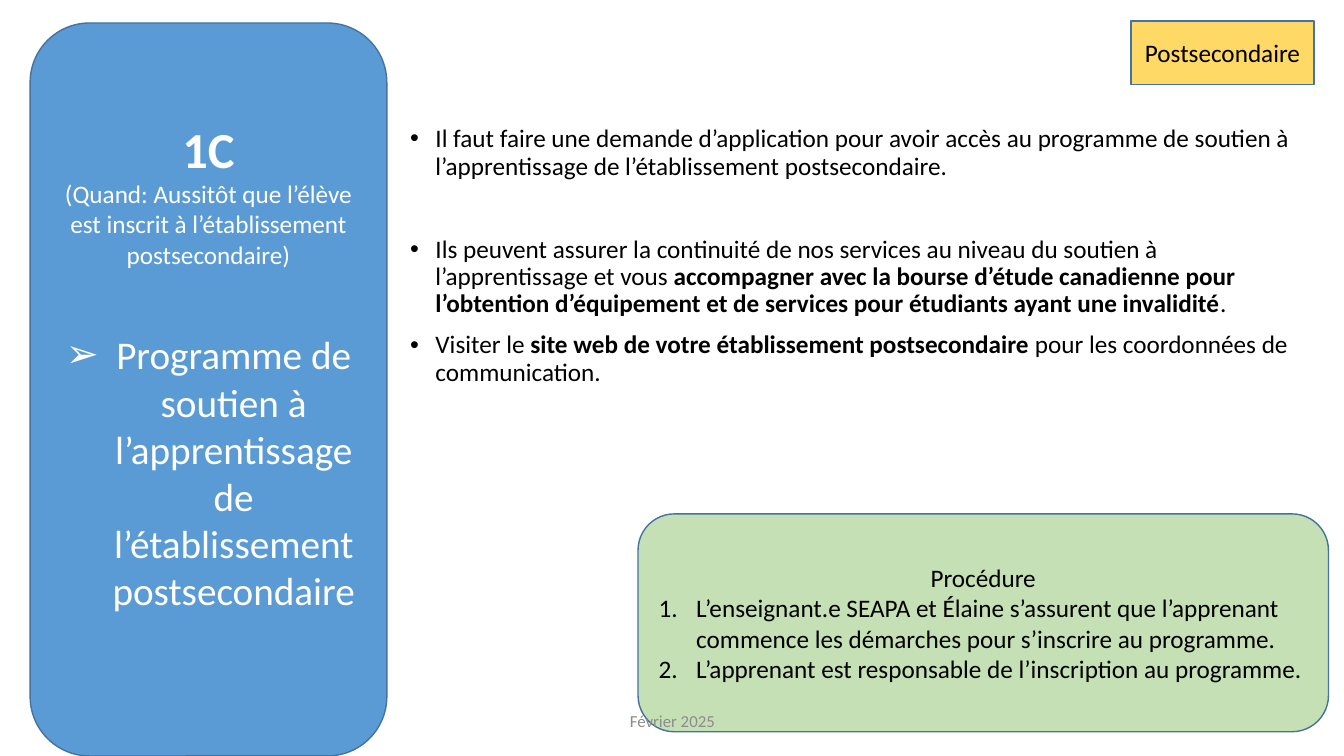
from lxml.etree import SubElement
from pptx import Presentation
from pptx.dml.color import RGBColor
from pptx.enum.shapes import MSO_SHAPE as Shape
from pptx.enum.text import MSO_ANCHOR as Anchor, MSO_AUTO_SIZE as AutoSize, PP_ALIGN as Align
from pptx.oxml.ns import qn
from pptx.util import Cm, Pt

COLORS = {"blue": "5B9BD5", "green": "C5E0B4", "yellow": "FFD966", "outline": "43739E",
          "white": "FFFFFF", "black": "000000", "gray": "8C8C8C"}


def add_paragraph(frame, spans, size, color="black", marker=None, indent=0, **formats):
    """Fill the empty first paragraph or add one; spans are (text, bold) pairs."""
    para = frame.paragraphs[0]
    if para.runs:
        para = frame.add_paragraph()
    for name, value in ({"alignment": Align.LEFT} | formats).items():
        setattr(para, name, value)
    for text, bold in spans:
        span = para.add_run()
        span.text = text
        for name, value in {"name": "Calibri", "size": Pt(size), "bold": bold}.items():
            setattr(span.font, name, value)
        span.font.color.rgb = RGBColor.from_string(COLORS[color])
    if marker:
        properties = para._p.get_or_add_pPr()
        properties.set("marL", str(Cm(indent)))
        properties.set("indent", str(-Cm(indent)))
        if marker == "number":
            SubElement(properties, qn("a:buAutoNum"), type="arabicPeriod")
        else:
            SubElement(properties, qn("a:buFont"), typeface="Arial")
            SubElement(properties, qn("a:buChar"), char=marker)


def add_panel(kind, fill, left, top, width, height):
    panel = page.shapes.add_shape(kind, Cm(left), Cm(top), Cm(width), Cm(height))
    panel.shadow.inherit = False
    panel.fill.solid()
    panel.fill.fore_color.rgb = RGBColor.from_string(COLORS[fill])
    panel.line.color.rgb = RGBColor.from_string(COLORS["outline"])
    panel.line.width = Pt(1)
    panel.text_frame.word_wrap = True
    panel.text_frame.vertical_anchor = Anchor.MIDDLE
    return panel.text_frame


deck = Presentation()
deck.slide_width, deck.slide_height = Cm(33.87), Cm(19.05)
page = deck.slides.add_slide(deck.slide_layouts[1])
title = page.shapes.title
title._element.getparent().remove(title._element)

# Main list
body = page.placeholders[1]
body.left, body.top, body.width, body.height = Cm(10.08), Cm(3.05), Cm(23.04), Cm(15.11)
body.text_frame.auto_size = AutoSize.NONE
advice = [
    (0, [("Il faut faire une demande d’application pour avoir accès au programme de soutien à "
          "l’apprentissage de l’établissement postsecondaire.", False)]),
    (40, [("Ils peuvent assurer la continuité de nos services au niveau du soutien à "
           "l’apprentissage et vous ", False),
          ("accompagner avec la bourse d’étude canadienne pour l’obtention d’équipement et de "
           "services pour étudiants ayant une invalidité", True),
          (".", False)]),
    (10, [("Visiter le ", False),
          ("site web de votre établissement postsecondaire ", True),
          ("pour les coordonnées de communication.", False)]),
]
for gap, spans in advice:
    add_paragraph(body.text_frame, spans, 18, marker="•", indent=0.64,
                  line_spacing=0.9, space_before=Pt(gap))

# Step panel
step = add_panel(Shape.ROUNDED_RECTANGLE, "blue", 0.76, 0.58, 8.99, 18.47)
step.margin_bottom = Cm(1.33)
centered = {"color": "white", "alignment": Align.CENTER}
add_paragraph(step, [("1C", True)], 36, **centered)
add_paragraph(step, [("(Quand: Aussitôt que l’élève est inscrit à l’établissement postsecondaire)",
                      False)], 18, **centered)
add_paragraph(step, [("Programme de soutien à l’apprentissage de l’établissement postsecondaire",
                      False)], 28, marker="➢", indent=1.27, space_before=Pt(44), **centered)

# Procedure panel
procedure = add_panel(Shape.ROUNDED_RECTANGLE, "green", 16.08, 12.95, 17.4, 5.49)
add_paragraph(procedure, [("Procédure", False)], 18, alignment=Align.CENTER)
for task in ("L’enseignant.e SEAPA et Élaine s’assurent que l’apprenant commence les démarches "
             "pour s’inscrire au programme.",
             "L’apprenant est responsable de l’inscription au programme."):
    add_paragraph(procedure, [(task, False)], 18, marker="number", indent=0.95)

# Level tag and date
level = add_panel(Shape.RECTANGLE, "yellow", 28.5, 0.53, 4.62, 1.6)
add_paragraph(level, [("Postsecondaire", False)], 18, alignment=Align.CENTER)

date = page.shapes.add_textbox(Cm(11.23), Cm(17.65), Cm(11.43), Cm(1.02)).text_frame
date.word_wrap = True
date.vertical_anchor = Anchor.MIDDLE
add_paragraph(date, [("Février 2025", False)], 12, "gray", alignment=Align.CENTER)

deck.save("out.pptx")
